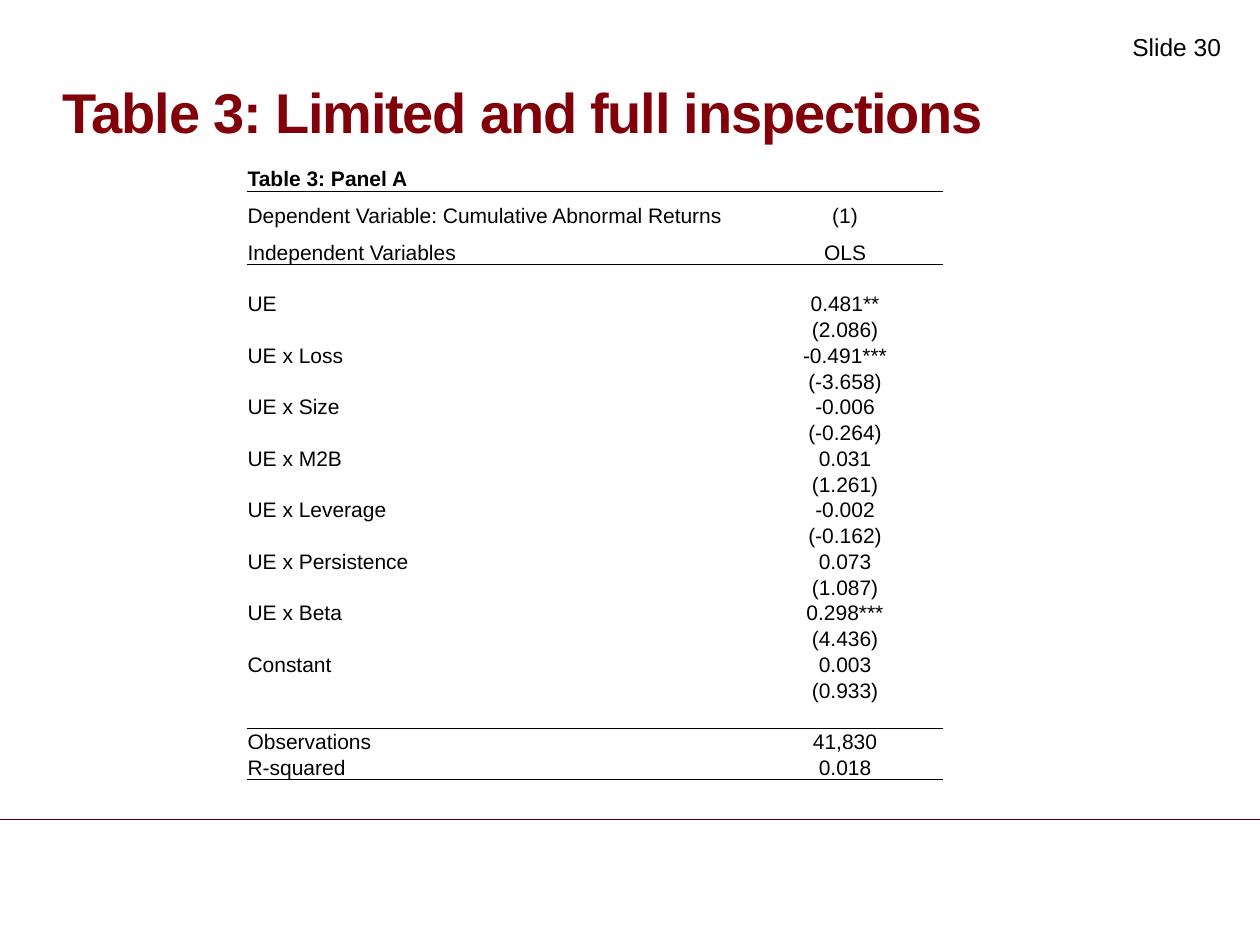
from dataclasses import dataclass

from pptx import Presentation
from pptx.dml.color import RGBColor
from pptx.enum.shapes import MSO_CONNECTOR
from pptx.enum.text import MSO_ANCHOR, PP_ALIGN
from pptx.oxml.xmlchemy import OxmlElement
from pptx.util import Pt

STRAIGHT = MSO_CONNECTOR.STRAIGHT
TOP, BOTTOM = MSO_ANCHOR.TOP, MSO_ANCHOR.BOTTOM
LEFT, CENTER = PP_ALIGN.LEFT, PP_ALIGN.CENTER


@dataclass(frozen=True)
class Theme:
    font: str = "Arial"
    ink: str = "000000"
    title: str = "820009"
    footer: str = "6E0000"
    title_size: float = 32
    number_size: float = 14
    table_size: float = 12
    rule_width: float = 0.5
    footer_width: float = 0.25


THEME = Theme()

# Regression results: variable, coefficient, t-statistic
ESTIMATES = [
    ("UE", "0.481**", "(2.086)"),
    ("UE x Loss", "-0.491***", "(-3.658)"),
    ("UE x Size", "-0.006", "(-0.264)"),
    ("UE x M2B", "0.031", "(1.261)"),
    ("UE x Leverage", "-0.002", "(-0.162)"),
    ("UE x Persistence", "0.073", "(1.087)"),
    ("UE x Beta", "0.298***", "(4.436)"),
    ("Constant", "0.003", "(0.933)"),
]
HEADER = [
    ("Table 3: Panel A", ""),
    ("Dependent Variable: Cumulative Abnormal Returns", "(1)"),
    ("Independent Variables", "OLS"),
]
SUMMARY = [("Observations", "41,830"), ("R-squared", "0.018")]
ROW_HEIGHT, HEADER_HEIGHT = 14.1, 21.1


def add_run(paragraph, text, size, color, bold=False):
    run = paragraph.add_run()
    run.text = text
    run.font.name = THEME.font
    run.font.size = Pt(size)
    run.font.bold = bold
    run.font.color.rgb = RGBColor.from_string(color)
    return run


def add_text_box(slide, box, anchor, margins):
    frame = slide.shapes.add_textbox(*map(Pt, box)).text_frame
    frame.word_wrap = True
    frame.vertical_anchor = anchor
    frame.margin_left = frame.margin_right = Pt(margins[0])
    frame.margin_top = frame.margin_bottom = Pt(margins[1])
    return frame.paragraphs[0]


def add_footer_line(slide, box):
    left, top, width, height = box
    line = slide.shapes.add_connector(
        STRAIGHT, Pt(left), Pt(top), Pt(left + width), Pt(top + height))
    line.line.color.rgb = RGBColor.from_string(THEME.footer)
    line.line.width = Pt(THEME.footer_width)
    line._element.spPr.append(OxmlElement("a:effectLst"))


def add_slide_number(slide, box):
    paragraph = add_text_box(slide, box, TOP, (7.2, 3.6))
    add_run(paragraph, "Slide 30", THEME.number_size, THEME.ink)


def add_title(slide, box):
    paragraph = add_text_box(slide, box, BOTTOM, (0, 0))
    paragraph.line_spacing = 0.9
    run = add_run(paragraph, "Table 3: Limited and full inspections",
                  THEME.title_size, THEME.title, bold=True)
    run.font._element.set("spc", "-70")


def set_borders(cell, ruled_sides):
    properties = cell._tc.get_or_add_tcPr()
    for side in "LRTB":
        border = OxmlElement(f"a:ln{side}")
        border.set("w", str(Pt(THEME.rule_width)))
        if side in ruled_sides:
            fill, color = OxmlElement("a:solidFill"), OxmlElement("a:srgbClr")
            color.set("val", THEME.ink)
            fill.append(color)
        else:
            fill = OxmlElement("a:noFill")
        border.append(fill)
        properties.append(border)


def fill_cell(cell, text, alignment, bold, ruled_sides):
    set_borders(cell, ruled_sides)
    cell.fill.background()
    cell.vertical_anchor = BOTTOM
    cell.margin_left = cell.margin_right = Pt(0.5)
    cell.margin_top, cell.margin_bottom = Pt(0.3), Pt(0)
    paragraph = cell.text_frame.paragraphs[0]
    paragraph.alignment = alignment
    if text:
        add_run(paragraph, text, THEME.table_size, THEME.ink, bold)
    else:
        # Keeps an empty row as low as the others
        end = OxmlElement("a:endParaRPr")
        end.set("sz", str(int(THEME.table_size * 100)))
        paragraph._p.append(end)


def add_results_table(slide, box):
    rows = HEADER + [("", "")]
    for name, coefficient, statistic in ESTIMATES:
        rows += [(name, coefficient), ("", statistic)]
    rows += [("", "")] + SUMMARY
    last = len(rows) - 1
    ruled_below = {0, len(HEADER) - 1, last - len(SUMMARY), last}

    table = slide.shapes.add_table(len(rows), 2, *map(Pt, box)).table
    table.first_row = table.horz_banding = False
    label_width = 285.8
    table.columns[0].width = Pt(label_width)
    table.columns[1].width = Pt(box[2] - label_width)
    for index, values in enumerate(rows):
        tall = 0 < index < len(HEADER)
        table.rows[index].height = Pt(HEADER_HEIGHT if tall else ROW_HEIGHT)
        sides = ("T" if index - 1 in ruled_below else "") + (
            "B" if index in ruled_below else "")
        for column, alignment in enumerate((LEFT, CENTER)):
            fill_cell(table.cell(index, column), values[column], alignment,
                      index == 0, sides)


def main():
    presentation = Presentation()
    presentation.slide_width, presentation.slide_height = Pt(720), Pt(540)
    slide = presentation.slides.add_slide(presentation.slide_layouts[6])
    add_footer_line(slide, (0, 468, 720, 0))
    add_slide_number(slide, (640, 14.5, 80, 37))
    add_title(slide, (36, 21, 648, 62))
    add_results_table(slide, (141, 94.4, 398, 338.2))
    presentation.save("out.pptx")


if __name__ == "__main__":
    main()
